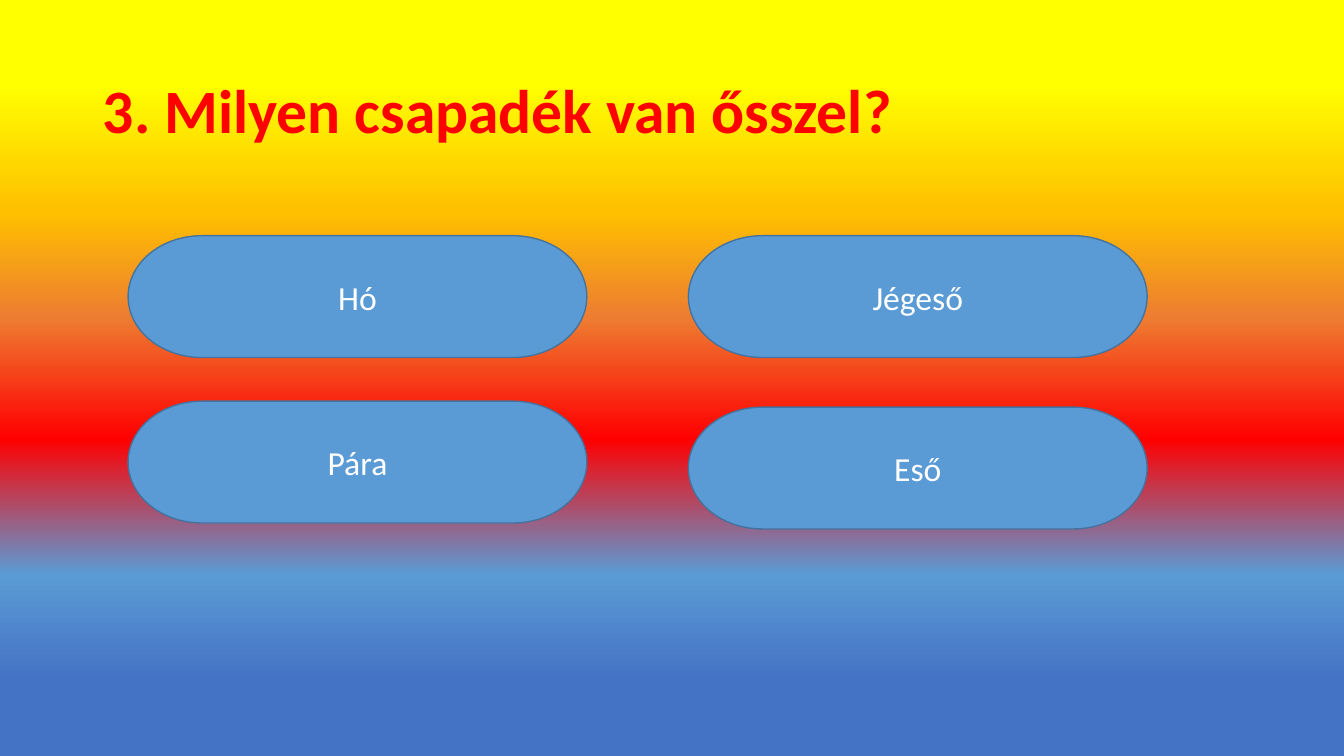
"""Build a Hungarian quiz slide about autumn precipitation."""
import pptx
import pptx.dml.color
import pptx.enum.shapes
import pptx.enum.text
import pptx.oxml
import pptx.oxml.ns
import pptx.util

Cm = pptx.util.Cm
PP_ALIGN = pptx.enum.text.PP_ALIGN

QUESTION = "3. Milyen csapadék van ősszel?"
ANSWERS = [
    ("Hó", 3.23, 5.94),
    ("Jégeső", 17.35, 5.94),
    ("Pára", 3.23, 10.11),
    ("Eső", 17.35, 10.26),
]
ANSWER_W, ANSWER_H = 11.56, 3.07
SKY = [(11, "FFFF00"), (28, "FFC000"), (42, "ED7D31"),
       (58, "FF0000"), (76, "5B9BD5"), (90, "4472C4")]


def rgb(value):
    return pptx.dml.color.RGBColor.from_string(value)


def write(tf, text, size, color, bold=False, align=PP_ALIGN.LEFT, spacing=1.0):
    tf.word_wrap = True
    tf.auto_size = pptx.enum.text.MSO_AUTO_SIZE.NONE
    tf.vertical_anchor = pptx.enum.text.MSO_ANCHOR.MIDDLE
    p = tf.paragraphs[0]
    p.alignment = align
    p.line_spacing = spacing
    r = p.add_run()
    r.text = text
    r.font.name = "Calibri"
    r.font.size = pptx.util.Pt(size)
    r.font.bold = bold
    r.font.color.rgb = rgb(color)


def paint_background(s, stops):
    fill = s.background.fill
    fill.gradient()
    fill.gradient_angle = 270
    gs_list = s.element.find(".//" + pptx.oxml.ns.qn("a:gsLst"))
    for gs in list(gs_list):
        gs_list.remove(gs)
    for percent, color in stops:
        gs_list.append(pptx.oxml.parse_xml(
            f'<a:gs {pptx.oxml.ns.nsdecls("a")} pos="{percent * 1000}">'
            f'<a:srgbClr val="{color}"/></a:gs>'))


def add_answer(s, text, left, top):
    sp = s.shapes.add_shape(
        pptx.enum.shapes.MSO_SHAPE.FLOWCHART_TERMINATOR,
        Cm(left), Cm(top), Cm(ANSWER_W), Cm(ANSWER_H))
    sp.shadow.inherit = False
    sp.fill.solid()
    sp.fill.fore_color.rgb = rgb("5B9BD5")
    sp.line.color.rgb = rgb("43739E")
    sp.line.width = pptx.util.Pt(1)
    write(sp.text_frame, text, 24, "FFFFFF", align=PP_ALIGN.CENTER)


def main():
    prs = pptx.Presentation()
    prs.slide_width, prs.slide_height = Cm(33.87), Cm(19.05)
    s = prs.slides.add_slide(prs.slide_layouts.get_by_name("Title Only"))
    paint_background(s, SKY)
    title = s.shapes.title
    title.left, title.top = Cm(2.34), Cm(1.02)
    title.width, title.height = Cm(29.21), Cm(3.68)
    write(title.text_frame, QUESTION, 44, "FF0000", bold=True, spacing=0.9)
    for text, left, top in ANSWERS:
        add_answer(s, text, left, top)
    prs.save("out.pptx")


if __name__ == "__main__":
    main()
